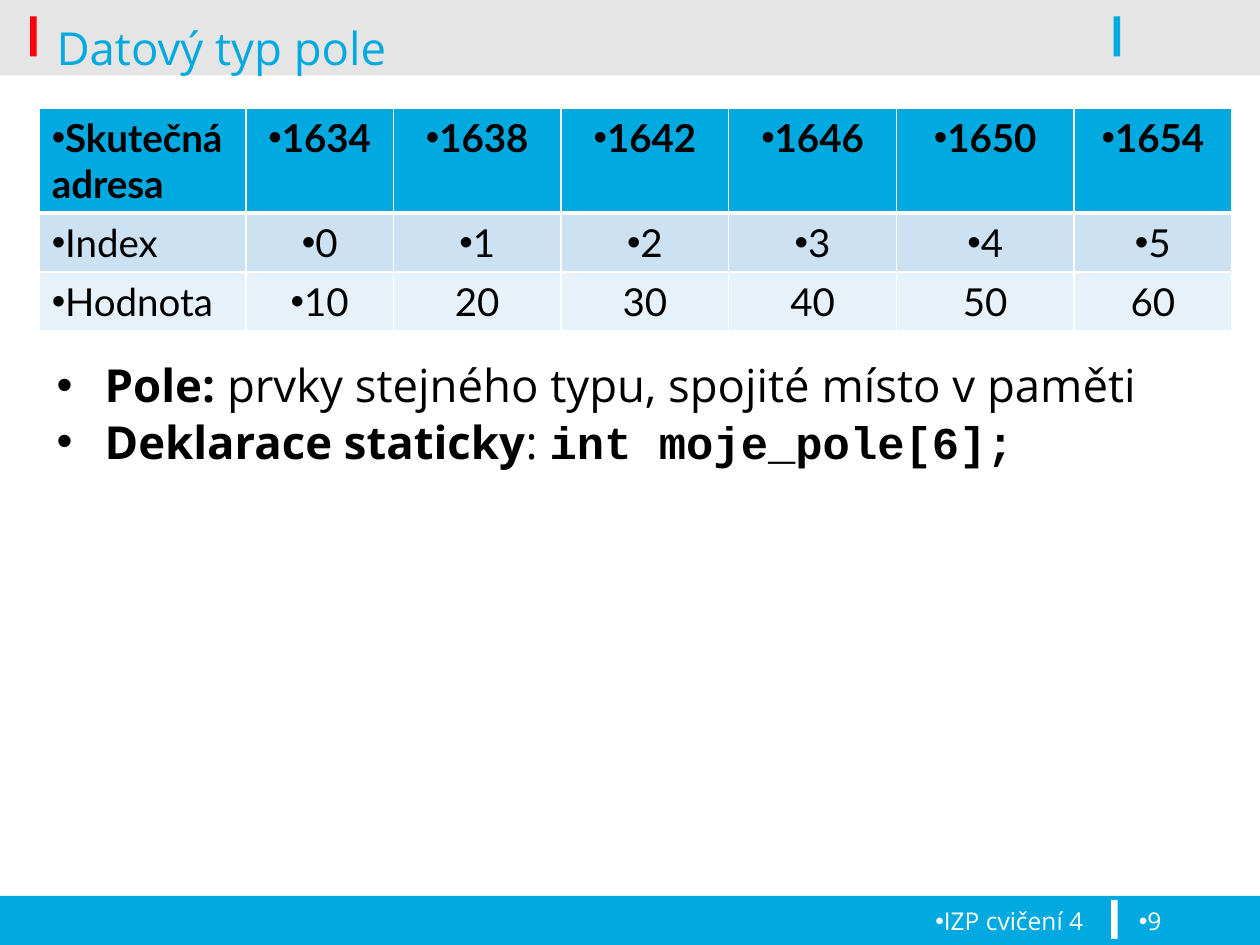
"""Build the slide on the array data type."""
from dataclasses import dataclass, field
from typing import Any

import lxml.etree
import pptx
import pptx.dml.color
import pptx.enum.shapes
import pptx.enum.text
import pptx.oxml.ns
import pptx.util

Cm = pptx.util.Cm
Pt = pptx.util.Pt
qn = pptx.oxml.ns.qn
ALIGN = pptx.enum.text.PP_ALIGN
ANCHOR = pptx.enum.text.MSO_ANCHOR

COLORS = {
    "accent": "00A9E0",
    "red": "FE000C",
    "white": "FFFFFF",
    "black": "000000",
    "band_dark": "CCE2F3",
    "band_light": "E7F1F9",
}
TITLE = {"name": "Open Sans", "size": Pt(26), "color": "accent"}
BODY = TITLE | {"color": "black", "bold": False}
STRONG = BODY | {"bold": True}
CODE = STRONG | {"name": "Courier New"}
FOOTER = {"name": "Open Sans", "size": Pt(14), "color": "white"}
CELL = {"name": "Lato", "size": Pt(22), "color": "black", "bold": False}
HEADER = CELL | {"bold": True}


@dataclass
class Bar:
    """A plain rectangle, in centimetres."""
    left: float
    top: float
    width: float
    height: float
    color: str
    alpha: int = 100


@dataclass
class Para:
    """A paragraph made of (text, format) runs."""
    runs: list[tuple[str, dict[str, Any]]]
    bullet: bool = True
    indent: float = 0
    fmt: dict[str, Any] = field(default_factory=dict)


@dataclass
class Box:
    """A text box, in centimetres."""
    left: float
    top: float
    width: float
    height: float
    paras: list[Para]
    fmt: dict[str, Any] = field(default_factory=dict)


@dataclass
class Row:
    """A table row with its look."""
    texts: list[str]
    height: float
    fill: str
    font: dict[str, Any]
    border: float
    bullets: int = 7


BARS = [
    Bar(0, 18.06, 25.4, 0.99, "accent"),
    Bar(0, 1.42, 25.4, 0.1, "black", 10),
    Bar(0, 0, 25.4, 1.42, "black", 10),
    Bar(0.61, 0.33, 0.13, 0.81, "red"),
    Bar(22.4, 18.14, 0.13, 0.79, "white"),
    Bar(22.45, 0.33, 0.13, 0.81, "accent"),
]
BOXES = [
    Box(0.89, -0.05, 21.39, 2.01, [Para([("Datový typ pole", TITLE)], False)],
        {"vertical_anchor": ANCHOR.MIDDLE}),
    Box(0.3, 18.14, 21.79, 0.91,
        [Para([("IZP cvičení 4", FOOTER)], fmt={"alignment": ALIGN.RIGHT})]),
    Box(22.71, 18.14, 2.29, 0.91, [Para([("9", FOOTER)])]),
    Box(0.89, 7.14, 24.51, 10.52, [
        Para([("Pole: ", STRONG),
              ("prvky stejného typu, spojité místo v paměti", BODY)], indent=0.97),
        Para([("Deklarace staticky", STRONG), (": ", BODY),
              ("int moje_pole[6];", CODE)], indent=0.97, fmt={"space_before": Pt(1.2)}),
    ], {"margin_top": Cm(0.06)}),
]
COLUMNS = [4.17, 2.97, 3.38, 3.38, 3.38, 3.58, 3.18]
ROWS = [
    Row(["Skutečná adresa"] + [str(1634 + 4 * i) for i in range(6)],
        2.1, "accent", HEADER, 3),
    Row(["Index"] + [str(i) for i in range(6)], 1.18, "band_dark", CELL, 1),
    Row(["Hodnota"] + [str(10 * i) for i in range(1, 7)],
        1.18, "band_light", CELL, 1, bullets=2),
]


def rgb(name: str) -> pptx.dml.color.RGBColor:
    """Return the named colour."""
    return pptx.dml.color.RGBColor.from_string(COLORS[name])


def set_attrs(target: Any, fmt: dict[str, Any]) -> None:
    """Set each format value on the target."""
    for key, value in fmt.items():
        if key == "color":
            target.color.rgb = rgb(value)
        else:
            setattr(target, key, value)


def fill_para(p: Any, para: Para) -> None:
    """Write a paragraph with its bullet and runs."""
    pPr = p._p.get_or_add_pPr()
    pPr.set("marL", str(Cm(para.indent)))
    pPr.set("indent", str(-Cm(para.indent)))
    if para.bullet:
        lxml.etree.SubElement(pPr, qn("a:buFont"), typeface="Arial")
        lxml.etree.SubElement(pPr, qn("a:buChar"), char="•")
    else:
        lxml.etree.SubElement(pPr, qn("a:buNone"))
    set_attrs(p, para.fmt)
    for text, font in para.runs:
        r = p.add_run()
        r.text = text
        set_attrs(r.font, font)


def add_bar(slide: Any, bar: Bar) -> None:
    """Draw a rectangle without outline."""
    s = slide.shapes.add_shape(
        pptx.enum.shapes.MSO_SHAPE.RECTANGLE,
        Cm(bar.left), Cm(bar.top), Cm(bar.width), Cm(bar.height))
    s.shadow.inherit = False
    s.line.fill.background()
    s.fill.solid()
    s.fill.fore_color.rgb = rgb(bar.color)
    if bar.alpha < 100:
        color = s._element.spPr.find(".//" + qn("a:srgbClr"))
        lxml.etree.SubElement(color, qn("a:alpha"), val=str(bar.alpha * 1000))


def add_box(slide: Any, box: Box) -> None:
    """Draw a text box."""
    tf = slide.shapes.add_textbox(
        Cm(box.left), Cm(box.top), Cm(box.width), Cm(box.height)).text_frame
    set_attrs(tf, {"word_wrap": True} | box.fmt)
    for i, para in enumerate(box.paras):
        fill_para(tf.add_paragraph() if i else tf.paragraphs[0], para)


def add_borders(cell: Any, widths: dict[str, float]) -> None:
    """Draw white cell borders of the given widths."""
    tcPr = cell._tc.get_or_add_tcPr()
    for i, (side, width) in enumerate(widths.items()):
        ln = lxml.etree.Element(qn(f"a:ln{side}"), w=str(Pt(width)))
        fill = lxml.etree.SubElement(ln, qn("a:solidFill"))
        lxml.etree.SubElement(fill, qn("a:srgbClr"), val=COLORS["white"])
        tcPr.insert(i, ln)


def add_grid(slide: Any, left: float, top: float) -> None:
    """Draw the table of addresses, indices and values."""
    table = slide.shapes.add_table(
        len(ROWS), len(COLUMNS), Cm(left), Cm(top),
        Cm(sum(COLUMNS)), Cm(sum(row.height for row in ROWS))).table
    for column, width in zip(table.columns, COLUMNS):
        column.width = Cm(width)
    above = 1
    for i, row in enumerate(ROWS):
        table.rows[i].height = Cm(row.height)
        for j, text in enumerate(row.texts):
            cell = table.cell(i, j)
            cell.fill.solid()
            cell.fill.fore_color.rgb = rgb(row.fill)
            add_borders(cell, {"L": 1, "R": 1, "T": above, "B": row.border})
            align = ALIGN.CENTER if j else ALIGN.LEFT
            fill_para(cell.text_frame.paragraphs[0],
                      Para([(text, row.font)], j < row.bullets, fmt={"alignment": align}))
        above = row.border


def main() -> None:
    """Build and save the slide."""
    prs = pptx.Presentation()
    set_attrs(prs, {"slide_width": Cm(25.4), "slide_height": Cm(19.05)})
    slide = prs.slides.add_slide(prs.slide_layouts[6])
    for bar in BARS:
        add_bar(slide, bar)
    for box in BOXES:
        add_box(slide, box)
    add_grid(slide, 0.79, 2.18)
    prs.save("out.pptx")


if __name__ == "__main__":
    main()
